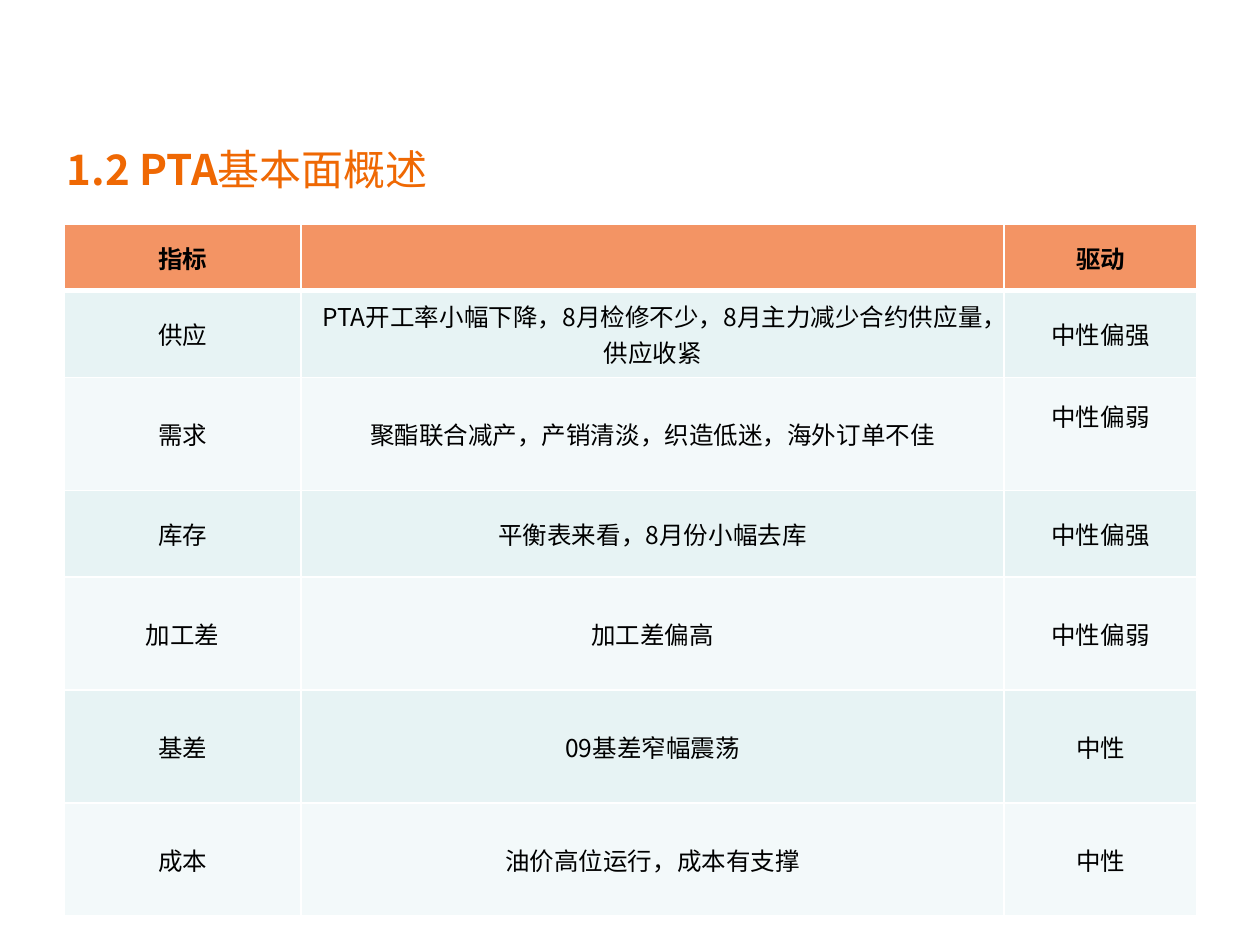
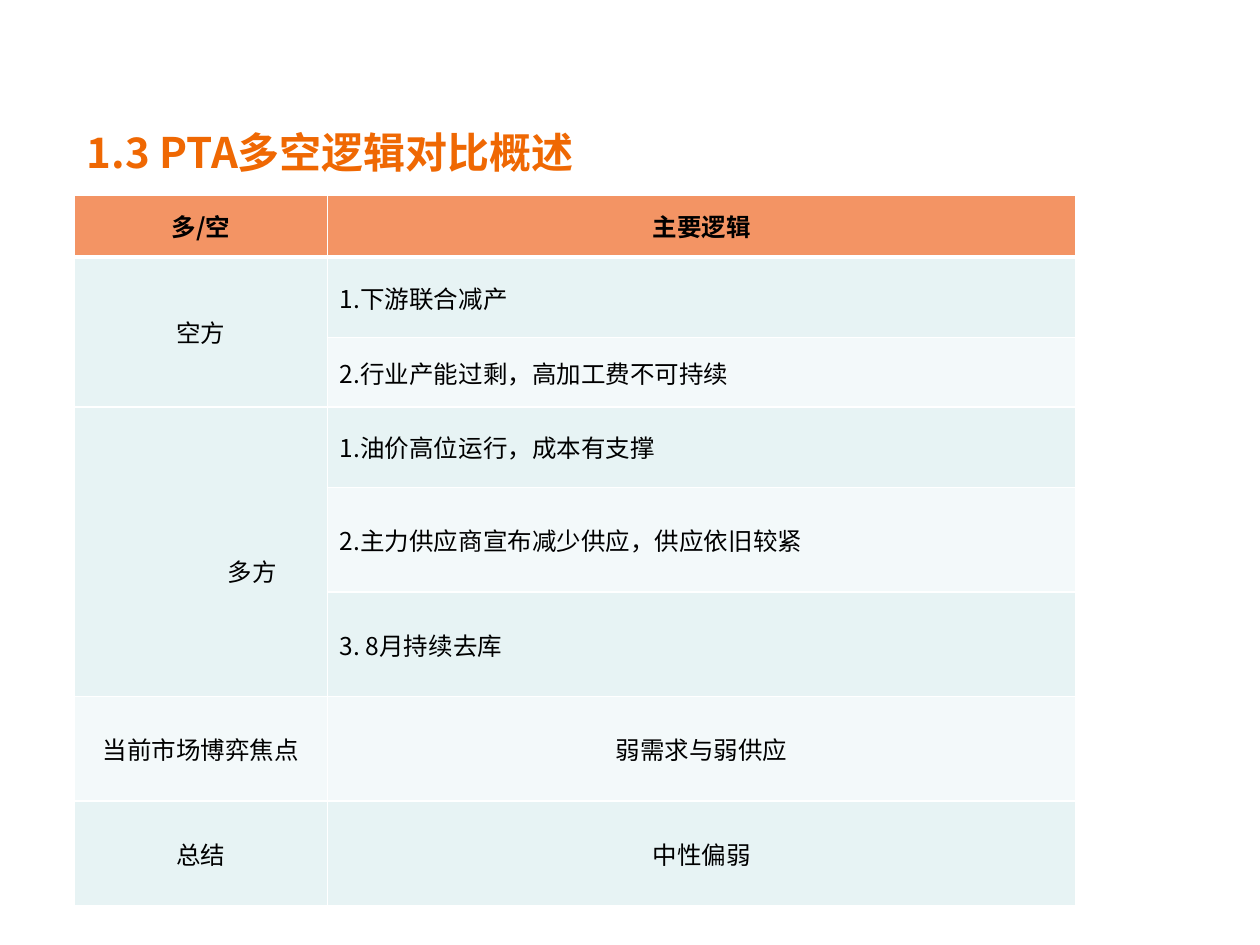
from lxml import etree
from pptx import Presentation
from pptx.dml.color import RGBColor
from pptx.enum.text import MSO_ANCHOR, PP_ALIGN
from pptx.oxml.ns import qn
from pptx.util import Inches, Pt

ORANGE = RGBColor(0xEF, 0x68, 0x03)
HEADER = RGBColor(0xF3, 0x94, 0x64)
BANDS = (RGBColor(0xF3, 0xF9, 0xFA), RGBColor(0xE7, 0xF3, 0xF4))
WHITE = RGBColor(0xFF, 0xFF, 0xFF)
BLACK = RGBColor(0, 0, 0)
LEFT, CENTER = PP_ALIGN.LEFT, PP_ALIGN.CENTER
MIDDLE = MSO_ANCHOR.MIDDLE
FONT = "Noto Sans CJK SC"
TITLE_WIDTH, TITLE_HEIGHT = 8.36, 0.89
THIN, THICK = 1, 3


def write(paragraph, text, size=14, color=BLACK, bold=False, align=CENTER):
    paragraph.alignment = align
    run = paragraph.add_run()
    run.text = text
    run.font.size = Pt(size)
    run.font.bold = bold
    run.font.name = FONT
    run.font.color.rgb = color
    east_asian = etree.SubElement(run.font._element, qn("a:ea"))
    east_asian.set("typeface", FONT)


def add_title(slide, left, top, pieces, indent=0.1):
    title = slide.shapes.add_textbox(
        Inches(left), Inches(top), Inches(TITLE_WIDTH), Inches(TITLE_HEIGHT))
    frame = title.text_frame
    frame.word_wrap = True
    frame.vertical_anchor = MIDDLE
    frame.margin_left = Inches(indent)
    for text, bold in pieces:
        write(frame.paragraphs[0], text, size=24, color=ORANGE, bold=bold, align=LEFT)


def add_borders(cell, top, bottom):
    properties = cell._tc.get_or_add_tcPr()
    for side, width in (("L", THIN), ("R", THIN), ("T", top), ("B", bottom)):
        line = etree.SubElement(properties, qn(f"a:ln{side}"), w=str(Pt(width)))
        fill = etree.SubElement(line, qn("a:solidFill"))
        etree.SubElement(fill, qn("a:srgbClr"), val=str(WHITE))


def add_overview(slide, box, column_shares, row_shares, rows, left_rows=(), merges=()):
    left, top, width, height = map(Inches, box)
    table = slide.shapes.add_table(
        len(rows), len(column_shares), left, top, width, height).table
    for column, share in zip(table.columns, column_shares):
        column.width = round(width * share / sum(column_shares))
    for row, share in zip(table.rows, row_shares):
        row.height = round(height * share / sum(row_shares))
    for r, texts in enumerate(rows):
        is_header = r == 0
        for c, text in enumerate(texts):
            cell = table.cell(r, c)
            add_borders(cell, THICK if r == 1 else THIN, THICK if is_header else THIN)
            cell.fill.solid()
            cell.fill.fore_color.rgb = HEADER if is_header else BANDS[r % 2]
            cell.vertical_anchor = MIDDLE
            if text:
                align = LEFT if c == 1 and r in left_rows else CENTER
                write(cell.text_frame.paragraphs[0], text, bold=is_header, align=align)
    for first, last in merges:
        table.cell(first, 0).merge(table.cell(last, 0))
    return table


def build_fundamentals(slide):
    add_title(slide, 0.35, 0.89, [("1.2 PTA", True), ("基本面概述", False)], indent=0.18)
    indicators = add_overview(
        slide, (0.51, 1.78, 8.99, 5.49),
        (1.88, 5.58, 1.53), (0.53, 0.69, 0.9, 0.69, 0.9, 0.9, 0.9),
        [
            ("指标", "", "驱动"),
            ("供应", "PTA开工率小幅下降，8月检修不少，8月主力减少合约供应量，供应收紧", "中性偏强"),
            ("需求", "聚酯联合减产，产销清淡，织造低迷，海外订单不佳", "中性偏弱"),
            ("库存", "平衡表来看，8月份小幅去库", "中性偏强"),
            ("加工差", "加工差偏高", "中性偏弱"),
            ("基差", "09基差窄幅震荡", "中性"),
            ("成本", "油价高位运行，成本有支撑", "中性"),
        ])
    indicators.cell(2, 2).margin_bottom = Inches(0.34)


def build_logic(slide):
    add_title(slide, 0.59, 0.76, [("1.3 PTA多空逻辑对比概述", True)])
    logic = add_overview(
        slide, (0.59, 1.55, 7.95, 5.64),
        (2.01, 5.95), (0.49, 0.64, 0.55, 0.64, 0.83, 0.83, 0.83, 0.83),
        [
            ("多/空", "主要逻辑"),
            ("空方", "1.下游联合减产"),
            ("", "2.行业产能过剩，高加工费不可持续"),
            ("多方", "1.油价高位运行，成本有支撑"),
            ("", "2.主力供应商宣布减少供应，供应依旧较紧"),
            ("", "3. 8月持续去库"),
            ("当前市场博弈焦点", "弱需求与弱供应"),
            ("总结", "中性偏弱"),
        ],
        left_rows=range(1, 6), merges=((1, 2), (3, 5)))
    bulls = logic.cell(3, 0)
    bulls.margin_left = Inches(0.92)
    bulls.margin_top = Inches(0.35)


def main():
    deck = Presentation()
    deck.slide_width, deck.slide_height = Inches(10), Inches(7.5)
    blank = deck.slide_layouts[6]
    for build in (build_fundamentals, build_logic):
        build(deck.slides.add_slide(blank))
    deck.save("out.pptx")


if __name__ == "__main__":
    main()
